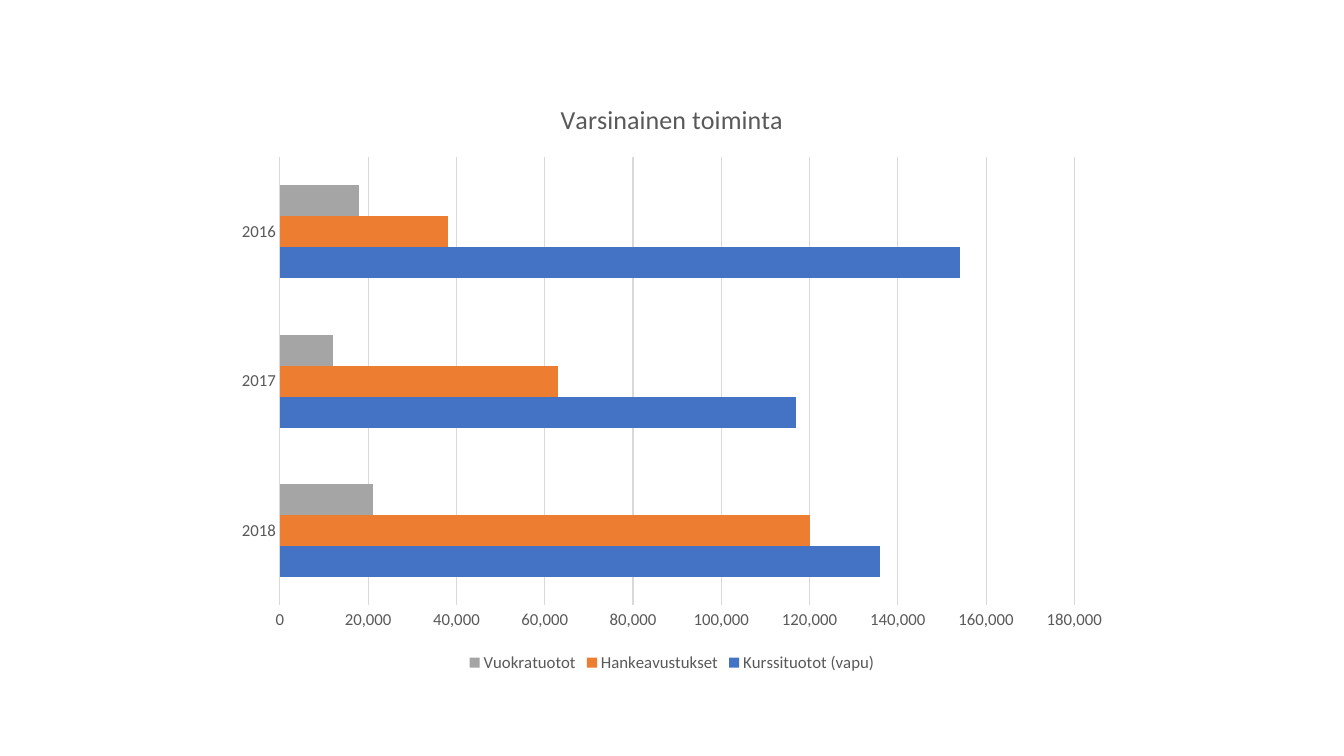
from dataclasses import dataclass

import pptx
import pptx.chart.data
import pptx.dml.color
import pptx.enum.chart
import pptx.util

Pt = pptx.util.Pt


@dataclass(frozen=True)
class Theme:
    font: str = "Calibri"
    text: str = "595959"
    rule: str = "D9D9D9"
    base_size: float = 10
    label_size: float = 12
    title_size: float = 18.6
    rule_width: float = 0.75


THEME = Theme()
YEARS = ["2018", "2017", "2016"]
INCOME = [
    ("Kurssituotot (vapu)", "4472C4", (136000, 117000, 154000)),
    ("Hankeavustukset", "ED7D31", (120000, 63000, 38000)),
    ("Vuokratuotot", "A5A5A5", (21000, 12000, 18000)),
]


def rgb(value):
    return pptx.dml.color.RGBColor.from_string(value)


def apply(target, values):
    for name, value in values.items():
        setattr(target, name, value)


def style_font(font, size):
    apply(font, {"name": THEME.font, "size": Pt(size), "bold": False})
    font.color.rgb = rgb(THEME.text)


def style_rule(line):
    line.color.rgb = rgb(THEME.rule)
    line.width = Pt(THEME.rule_width)


def style_axes(chart):
    axis_values = {
        "major_tick_mark": pptx.enum.chart.XL_TICK_MARK.NONE,
        "minor_tick_mark": pptx.enum.chart.XL_TICK_MARK.NONE,
    }
    for axis in (chart.category_axis, chart.value_axis):
        apply(axis, axis_values)
        style_font(axis.tick_labels.font, THEME.label_size)

    style_rule(chart.category_axis.format.line)
    value_axis = chart.value_axis
    apply(value_axis, {"minimum_scale": 0, "maximum_scale": 180000,
                       "major_unit": 20000, "has_major_gridlines": True})
    apply(value_axis.tick_labels, {"number_format": "#,##0",
                                   "number_format_is_linked": False})
    value_axis.format.line.fill.background()
    style_rule(value_axis.major_gridlines.format.line)


def style_title(chart, text):
    chart.has_title = True
    chart.chart_title.include_in_layout = False
    para = chart.chart_title.text_frame.paragraphs[0]
    span = para.add_run()
    span.text = text
    style_font(span.font, THEME.title_size)


def style_legend(chart):
    chart.has_legend = True
    apply(chart.legend, {
        "position": pptx.enum.chart.XL_LEGEND_POSITION.BOTTOM,
        "include_in_layout": False,
    })
    style_font(chart.legend.font, THEME.label_size)


def add_income_chart(page, left, top, width, height):
    data = pptx.chart.data.CategoryChartData(number_format="#,##0")
    data.categories = YEARS
    for name, _, values in INCOME:
        data.add_series(name, values)
    chart = page.shapes.add_chart(
        pptx.enum.chart.XL_CHART_TYPE.BAR_CLUSTERED,
        Pt(left), Pt(top), Pt(width), Pt(height), data,
    ).chart
    apply(chart.font, {"name": THEME.font, "size": Pt(THEME.base_size)})

    plot = chart.plots[0]
    apply(plot, {"gap_width": 182, "vary_by_categories": False})
    for series, (_, color, _) in zip(plot.series, INCOME):
        series.format.fill.solid()
        series.format.fill.fore_color.rgb = rgb(color)

    style_axes(chart)
    style_title(chart, "Varsinainen toiminta")
    style_legend(chart)


def main():
    deck = pptx.Presentation()
    apply(deck, {"slide_width": Pt(960), "slide_height": Pt(540)})
    page = deck.slides.add_slide(deck.slide_layouts[6])
    add_income_chart(page, left=160, top=56.67, width=640, height=426.67)
    deck.save("out.pptx")


if __name__ == "__main__":
    main()
